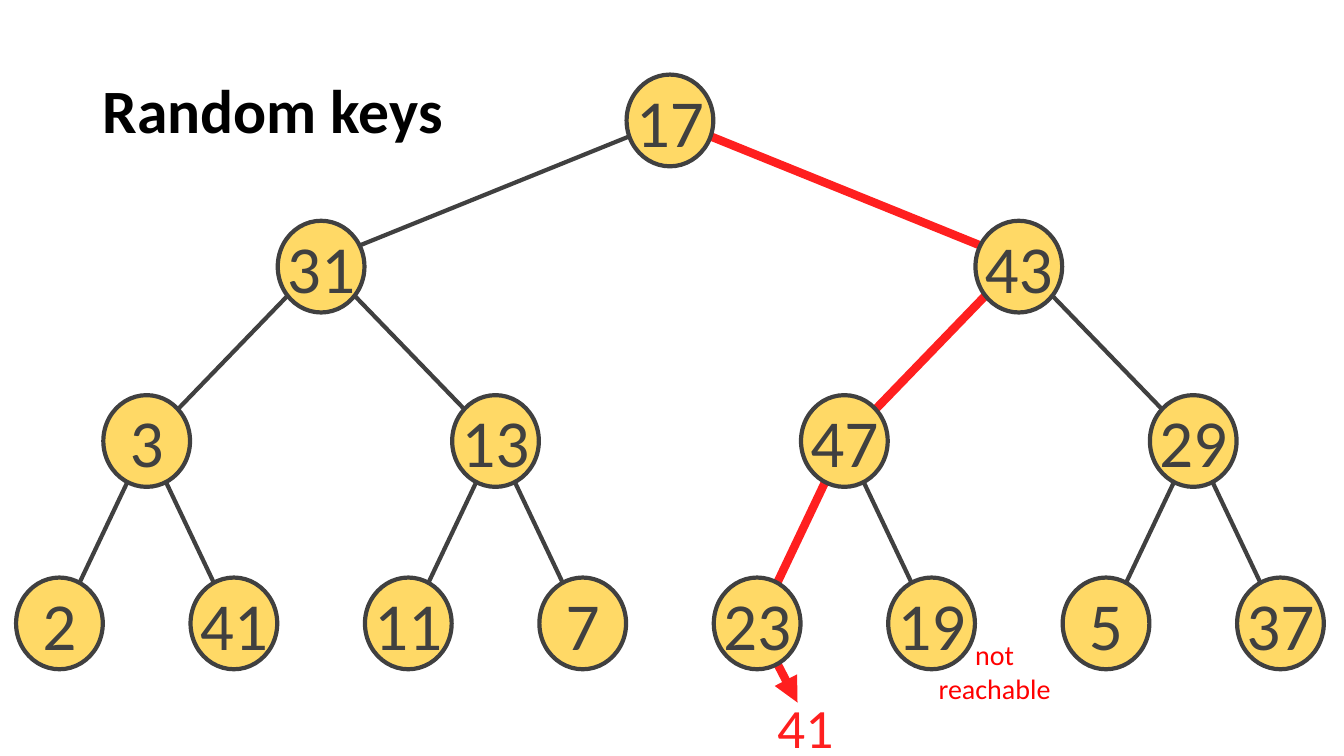
from lxml.etree import SubElement
from pptx import Presentation
from pptx.dml.color import RGBColor
from pptx.enum.shapes import MSO_CONNECTOR as Link, MSO_SHAPE as Form
from pptx.enum.text import MSO_ANCHOR as Anchor, PP_ALIGN as Align
from pptx.oxml.ns import qn
from pptx.util import Inches, Pt

GREY = RGBColor(0x40, 0x40, 0x40)
GOLD = RGBColor(0xFF, 0xD9, 0x66)
RED = RGBColor(0xFF, 0x1F, 0x1F)
NOTE_RED = RGBColor(0xFF, 0x00, 0x00)
BLACK = RGBColor(0x00, 0x00, 0x00)

# Keys by level, top of each row, and height where its edges meet
LEVELS = [[17], [31, 43], [3, 13, 47, 29], [2, 41, 11, 7, 23, 19, 5, 37]]
TOPS = [0.74, 2.19, 3.92, 5.73]
JOINS = [1.19, 2.59, 4.38, 6.2]
ROUTE = [0, 1, 2, 4]  # place of the searched node in each level
WIDE, HIGH, STEP = 0.86, 0.91, 1.73


def write(shape, text, size, color, align=Align.CENTER, space=1.0,
          bold=False, anchor=Anchor.MIDDLE, wrap=True, inset=None):
    frame = shape.text_frame
    form = {"word_wrap": wrap, "vertical_anchor": anchor}
    if inset is not None:
        for side in ("left", "top", "right", "bottom"):
            form["margin_" + side] = Inches(inset)
    for name, value in form.items():
        setattr(frame, name, value)
    para = frame.paragraphs[0]
    para.alignment, para.line_spacing = align, space
    run = para.add_run()
    run.text = text
    looks = {"name": "Calibri", "size": Pt(size), "bold": bold}
    for name, value in looks.items():
        setattr(run.font, name, value)
    run.font.color.rgb = color


def add_edge(slide, start, end, color, width, arrow=False):
    edge = slide.shapes.add_connector(
        Link.STRAIGHT, *[Inches(n) for n in (*start, *end)])
    edge.line.color.rgb, edge.line.width = color, Pt(width)
    props = edge.element.spPr
    if arrow:
        SubElement(props.find(qn("a:ln")), qn("a:tailEnd"), type="triangle")
    SubElement(props, qn("a:effectLst"))


def add_node(slide, left, top, key):
    node = slide.shapes.add_shape(
        Form.OVAL, *[Inches(n) for n in (left, top, WIDE, HIGH)])
    node.shadow.inherit = False
    node.fill.solid()
    node.fill.fore_color.rgb = GOLD
    node.line.color.rgb, node.line.width = GREY, Pt(3)
    write(node, str(key), 48, GREY, wrap=False, inset=0)


def add_tree(slide, box):
    left, top = box

    def mid(level, place):
        leaf = (place + 0.5) * 2 ** (3 - level) - 0.5
        return left + WIDE / 2 + STEP * leaf

    def join(level, place):
        return mid(level, place), top + JOINS[level]

    # Edges: plain ones first, the search route above them
    plain, route = [], []
    for level in range(1, len(LEVELS)):
        for place in range(len(LEVELS[level])):
            ends = join(level - 1, place // 2), join(level, place)
            (route if place == ROUTE[level] else plain).append(ends)
    for ends in plain:
        add_edge(slide, *ends, GREY, 3)
    for ends in route:
        add_edge(slide, *ends, RED, 6)
    start = join(3, ROUTE[3])
    add_edge(slide, start, (start[0] + 0.4, start[1] + 0.77), RED, 6, True)

    # Nodes
    for level, keys in enumerate(LEVELS):
        for place, key in enumerate(keys):
            add_node(slide, mid(level, place) - WIDE / 2,
                     top + TOPS[level], key)


def add_title(slide, box):
    title = slide.shapes.title
    for name, value in zip(("left", "top", "width", "height"), box):
        setattr(title, name, Inches(value))
    write(title, "Random keys", 44, BLACK, Align.LEFT, 0.9, True)


def add_label(slide, box, text, size, color, **form):
    label = slide.shapes.add_textbox(*[Inches(n) for n in box])
    write(label, text, size, color, **form)


def main():
    deck = Presentation()
    deck.slide_width, deck.slide_height = Inches(13.33), Inches(7.5)
    slide = deck.slides.add_slide(deck.slide_layouts[5])
    add_title(slide, (0.92, 0.4, 11.5, 1.45))
    add_tree(slide, (0.16, 0))
    # Search key and remark
    add_label(slide, (7.61, 6.94, 1.15, 0.61), "41", 39.6, RED,
              align=Align.LEFT, space=0.9)
    add_label(slide, (9.08, 6.28, 1.57, 0.77), "not reachable", 20, NOTE_RED,
              anchor=Anchor.TOP)
    deck.save("out.pptx")


if __name__ == "__main__":
    main()
